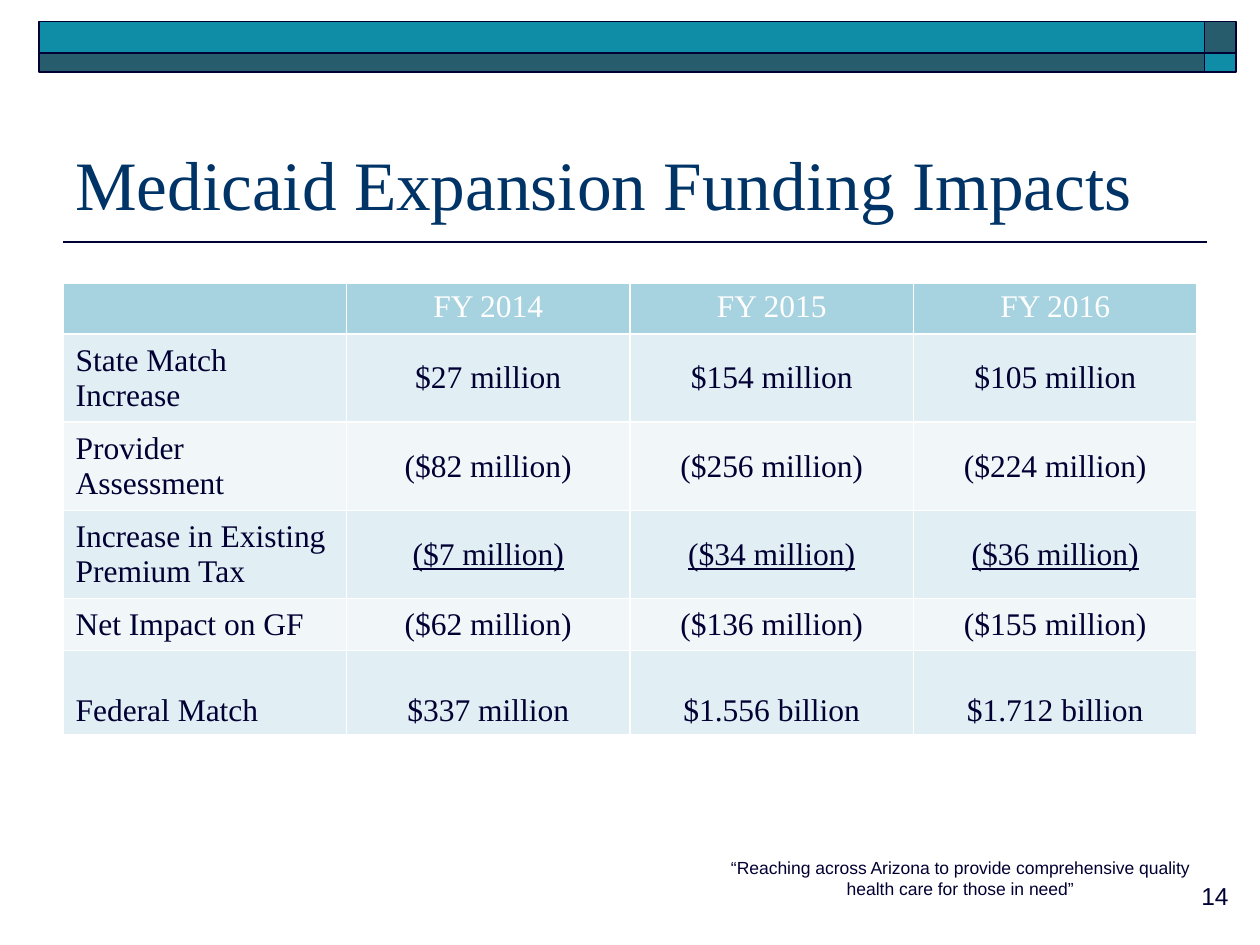
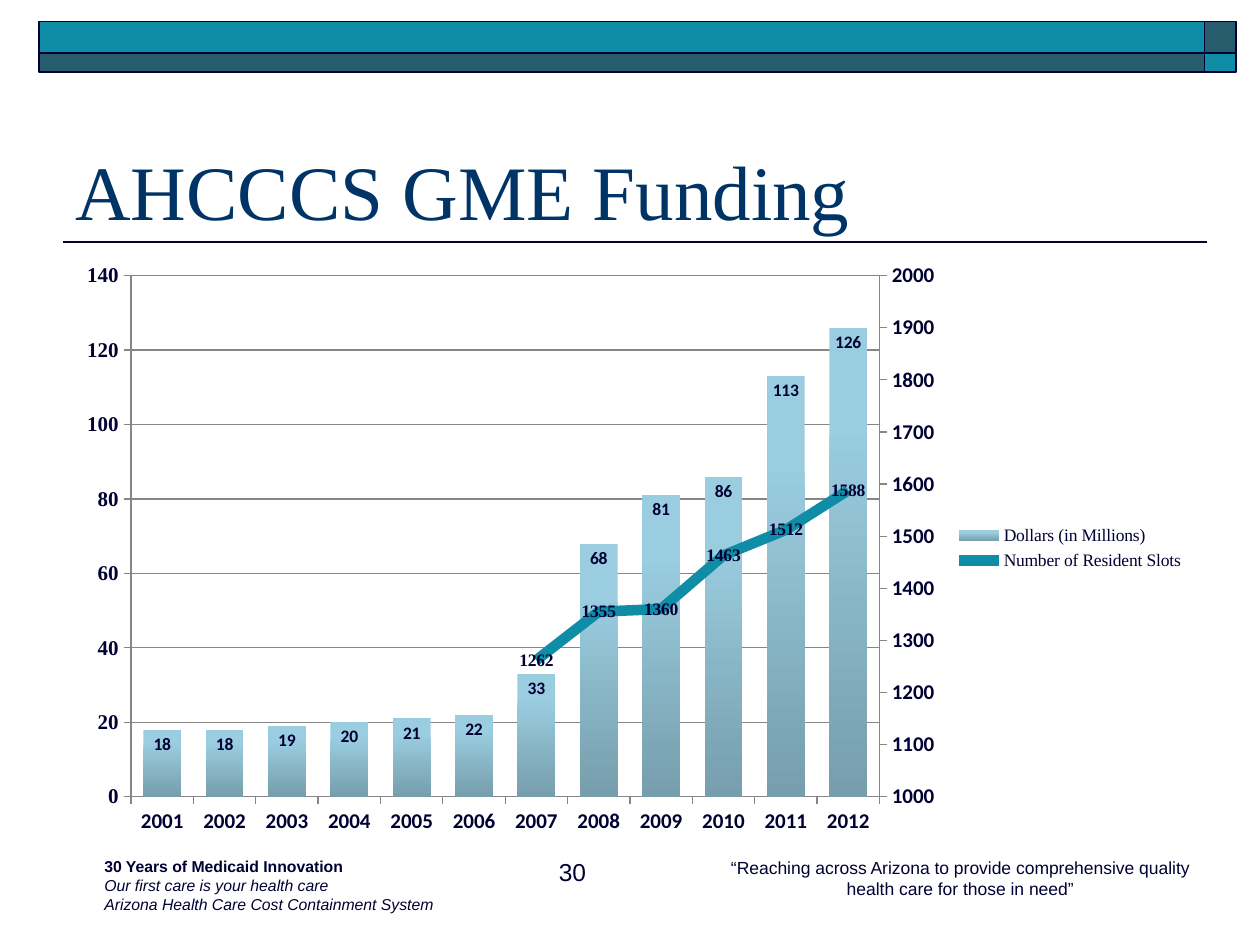
from lxml.etree import SubElement
from pptx import Presentation
from pptx.chart.data import CategoryChartData
from pptx.dml.color import RGBColor
from pptx.enum.chart import XL_CHART_TYPE, XL_LABEL_POSITION, XL_LEGEND_POSITION, XL_MARKER_STYLE, XL_TICK_MARK
from pptx.enum.shapes import MSO_CONNECTOR, MSO_SHAPE
from pptx.enum.text import MSO_ANCHOR, PP_ALIGN
from pptx.oxml import parse_xml
from pptx.oxml.ns import nsdecls, qn
from pptx.util import Pt

PX = 9144
INK = RGBColor(0x00, 0x00, 0x33)
NAVY = RGBColor(0x00, 0x33, 0x66)
TEAL = RGBColor(0x10, 0x8D, 0xA6)
DARK_TEAL = RGBColor(0x27, 0x5C, 0x6D)
HEADER_BLUE = RGBColor(0xA7, 0xD2, 0xDF)
BAND_BLUE = RGBColor(0xE1, 0xEE, 0xF3)
BAND_PALE = RGBColor(0xF1, 0xF7, 0xF9)
BAR_TOP = RGBColor(0x9A, 0xCD, 0xE0)
BAR_BOTTOM = RGBColor(0x77, 0x9E, 0xAC)
GRID_GRAY = RGBColor(0x86, 0x86, 0x86)
WHITE = RGBColor(0xFF, 0xFF, 0xFF)
SERIF = "Times New Roman"
SANS = "Arial"
LABEL_FONT = "Calibri"


def px(*lengths):
    return [length * PX for length in lengths]


def write(frame, text, font=SANS, size=10, color=INK, bold=False, italic=False,
          underline=False, align=PP_ALIGN.LEFT, anchor=MSO_ANCHOR.TOP):
    frame.word_wrap = True
    frame.vertical_anchor = anchor
    paragraph = frame.add_paragraph() if frame.text else frame.paragraphs[0]
    paragraph.alignment = align
    run = paragraph.add_run()
    run.text = text
    run.font.name = font
    run.font.size = Pt(size)
    run.font.color.rgb = color
    run.font.bold = bold
    run.font.italic = italic
    run.font.underline = underline


presentation = Presentation()
presentation.slide_width, presentation.slide_height = px(1000, 750)

BANDS = [
    ((956, 17, 25, 25), DARK_TEAL),
    ((31, 17, 925, 25), TEAL),
    ((31, 42, 925, 15), DARK_TEAL),
    ((956, 42, 25, 15), TEAL),
]
PAGES = [
    ("Medicaid Expansion Funding Impacts", 39.6, 58, "14", (935, 694, 50, 40)),
    ("AHCCCS GME Funding", 44, 67, "30", (242, 675, 233, 52)),
]
TAGLINE = "“Reaching across Arizona to provide comprehensive quality health care for those in need”"

slides = []
for title, title_size, title_top, number, number_box in PAGES:
    slide = presentation.slides.add_slide(presentation.slide_layouts[6])
    slides.append(slide)
    rule = slide.shapes.add_connector(MSO_CONNECTOR.STRAIGHT, *px(958, 192, 50, 192))
    rule.line.color.rgb = INK
    rule.line.width = Pt(1)
    SubElement(rule.element.spPr, qn("a:effectLst"))
    for box, color in BANDS:
        band = slide.shapes.add_shape(MSO_SHAPE.RECTANGLE, *px(*box))
        band.shadow.inherit = False
        band.fill.solid()
        band.fill.fore_color.rgb = color
        band.line.color.rgb = INK
        band.line.width = Pt(1)
    write(slide.shapes.add_textbox(*px(558, 675, 408, 43)).text_frame, TAGLINE, align=PP_ALIGN.CENTER)
    write(slide.shapes.add_textbox(*px(50, title_top, 900, 125)).text_frame, title,
          font=SERIF, size=title_size, color=NAVY, anchor=MSO_ANCHOR.BOTTOM)
    write(slide.shapes.add_textbox(*px(*number_box)).text_frame, number, size=14, align=PP_ALIGN.RIGHT)

funding_slide, gme_slide = slides

FUNDING_ROWS = [
    (37, ("", "FY 2014", "FY 2015", "FY 2016")),
    (65, ("State Match Increase", "$27 million", "$154 million", "$105 million")),
    (66, ("Provider Assessment", "($82 million)", "($256 million)", "($224 million)")),
    (65, ("Increase in Existing Premium Tax", "($7 million)", "($34 million)", "($36 million)")),
    (41, ("Net Impact on GF", "($62 million)", "($136 million)", "($155 million)")),
    (67, ("Federal Match", "$337 million", "$1.556 billion", "$1.712 billion")),
]
PREMIUM_TAX_ROW = 3
FEDERAL_ROW = 5
table_height = sum(height for height, _ in FUNDING_ROWS)
table = funding_slide.shapes.add_table(len(FUNDING_ROWS), 4, *px(50, 225, 900, table_height)).table
for row_index, (height, texts) in enumerate(FUNDING_ROWS):
    table.rows[row_index].height = height * PX
    is_header = row_index == 0
    fill = HEADER_BLUE if is_header else (BAND_PALE, BAND_BLUE)[row_index % 2]
    anchor = {0: MSO_ANCHOR.TOP, FEDERAL_ROW: MSO_ANCHOR.BOTTOM}.get(row_index, MSO_ANCHOR.MIDDLE)
    for column_index, text in enumerate(texts):
        cell = table.cell(row_index, column_index)
        cell.fill.solid()
        cell.fill.fore_color.rgb = fill
        write(cell.text_frame, text, font=SERIF, size=18, color=WHITE if is_header else INK,
              underline=row_index == PREMIUM_TAX_ROW and column_index > 0,
              align=PP_ALIGN.CENTER if column_index else PP_ALIGN.LEFT)
        cell.vertical_anchor = anchor

motto = gme_slide.shapes.add_textbox(*px(73, 675, 320, 52)).text_frame
write(motto, "30 Years of Medicaid Innovation", size=9, bold=True)
for line in ("Our first care is your health care", "Arizona Health Care Cost Containment System"):
    write(motto, line, size=9, italic=True)

chart_data = CategoryChartData()
chart_data.categories = [str(year) for year in range(2001, 2013)]
chart_data.add_series("Dollars (in Millions)", [18, 18, 19, 20, 21, 22, 33, 68, 81, 86, 113, 126])
chart_data.add_series("Number of Resident Slots", [None] * 6 + [1262, 1355, 1360, 1463, 1512, 1588])
chart = gme_slide.shapes.add_chart(
    XL_CHART_TYPE.COLUMN_CLUSTERED, *px(50, 200, 900, 470), chart_data).chart
chart.has_title = False
chart.font.name = SERIF
chart.font.size = Pt(10)
chart.font.color.rgb = INK
chart.has_legend = True
chart.legend.position = XL_LEGEND_POSITION.RIGHT
chart.legend.include_in_layout = False

value_axis = chart.value_axis
value_axis.minimum_scale = 0
value_axis.maximum_scale = 140
value_axis.major_unit = 20
value_axis.major_gridlines.format.line.color.rgb = GRID_GRAY
for axis, font_name in ((chart.category_axis, LABEL_FONT), (value_axis, SERIF)):
    axis.major_tick_mark = XL_TICK_MARK.OUTSIDE
    axis.format.line.color.rgb = GRID_GRAY
    axis.tick_labels.font.name = font_name
    axis.tick_labels.font.size = Pt(12)
    axis.tick_labels.font.bold = True
    axis.tick_labels.font.color.rgb = INK

plot_area = next(chart.element.iter(qn("c:plotArea")))
for old_layout in plot_area.findall(qn("c:layout")):
    plot_area.remove(old_layout)
plot_area.insert(0, parse_xml(
    f'<c:layout {nsdecls("c")}><c:manualLayout><c:layoutTarget val="inner"/>'
    '<c:xMode val="edge"/><c:yMode val="edge"/><c:x val="0.06"/><c:y val="0.04"/>'
    '<c:w val="0.66"/><c:h val="0.88"/></c:manualLayout></c:layout>'))

bar_chart = plot_area.find(qn("c:barChart"))
slots_element = bar_chart.findall(qn("c:ser"))[1]
for invert_flag in slots_element.findall(qn("c:invertIfNegative")):
    slots_element.remove(invert_flag)
line_chart = parse_xml(
    f'<c:lineChart {nsdecls("c")}><c:grouping val="standard"/><c:varyColors val="0"/>'
    '<c:marker val="1"/><c:axId val="5001"/><c:axId val="5002"/></c:lineChart>')
line_chart.insert(2, slots_element)
bar_chart.addnext(line_chart)
slots_axis = parse_xml(
    f'<c:valAx {nsdecls("c", "a")}><c:axId val="5002"/>'
    '<c:scaling><c:orientation val="minMax"/><c:max val="2000"/><c:min val="1000"/></c:scaling>'
    '<c:delete val="0"/><c:axPos val="r"/><c:numFmt formatCode="General" sourceLinked="0"/>'
    '<c:majorTickMark val="out"/><c:minorTickMark val="none"/><c:tickLblPos val="nextTo"/>'
    f'<c:spPr><a:ln><a:solidFill><a:srgbClr val="{GRID_GRAY}"/></a:solidFill></a:ln></c:spPr>'
    '<c:txPr><a:bodyPr/><a:p><a:pPr><a:defRPr sz="1200" b="1">'
    f'<a:solidFill><a:srgbClr val="{INK}"/></a:solidFill><a:latin typeface="{LABEL_FONT}"/>'
    '</a:defRPr></a:pPr><a:endParaRPr lang="en-US"/></a:p></c:txPr>'
    '<c:crossAx val="5001"/><c:crosses val="max"/><c:majorUnit val="100"/></c:valAx>')
hidden_axis = parse_xml(
    f'<c:catAx {nsdecls("c")}><c:axId val="5001"/>'
    '<c:scaling><c:orientation val="minMax"/></c:scaling><c:delete val="1"/><c:axPos val="b"/>'
    '<c:crossAx val="5002"/><c:crosses val="autoZero"/></c:catAx>')
plot_area.findall(qn("c:valAx"))[-1].addnext(slots_axis)
slots_axis.addnext(hidden_axis)

bar_plot, line_plot = chart.plots
bar_plot.gap_width = 65
bar_plot.vary_by_categories = False
dollars = bar_plot.series[0]
dollars.format.fill.gradient()
dollars.format.fill.gradient_angle = 270
for stop, position, color in zip(dollars.format.fill.gradient_stops, (0.2, 1), (BAR_TOP, BAR_BOTTOM)):
    stop.position = position
    stop.color.rgb = color
slots = line_plot.series[0]
slots.format.line.color.rgb = TEAL
slots.format.line.width = Pt(6)
slots.marker.style = XL_MARKER_STYLE.NONE
slots.smooth = False
for series, position, font_name in ((dollars, XL_LABEL_POSITION.INSIDE_END, LABEL_FONT),
                                    (slots, XL_LABEL_POSITION.CENTER, SERIF)):
    labels = series.data_labels
    labels.show_value = True
    labels.position = position
    labels.font.name = font_name
    labels.font.size = Pt(10)
    labels.font.bold = True
    labels.font.color.rgb = INK

presentation.save("out.pptx")
